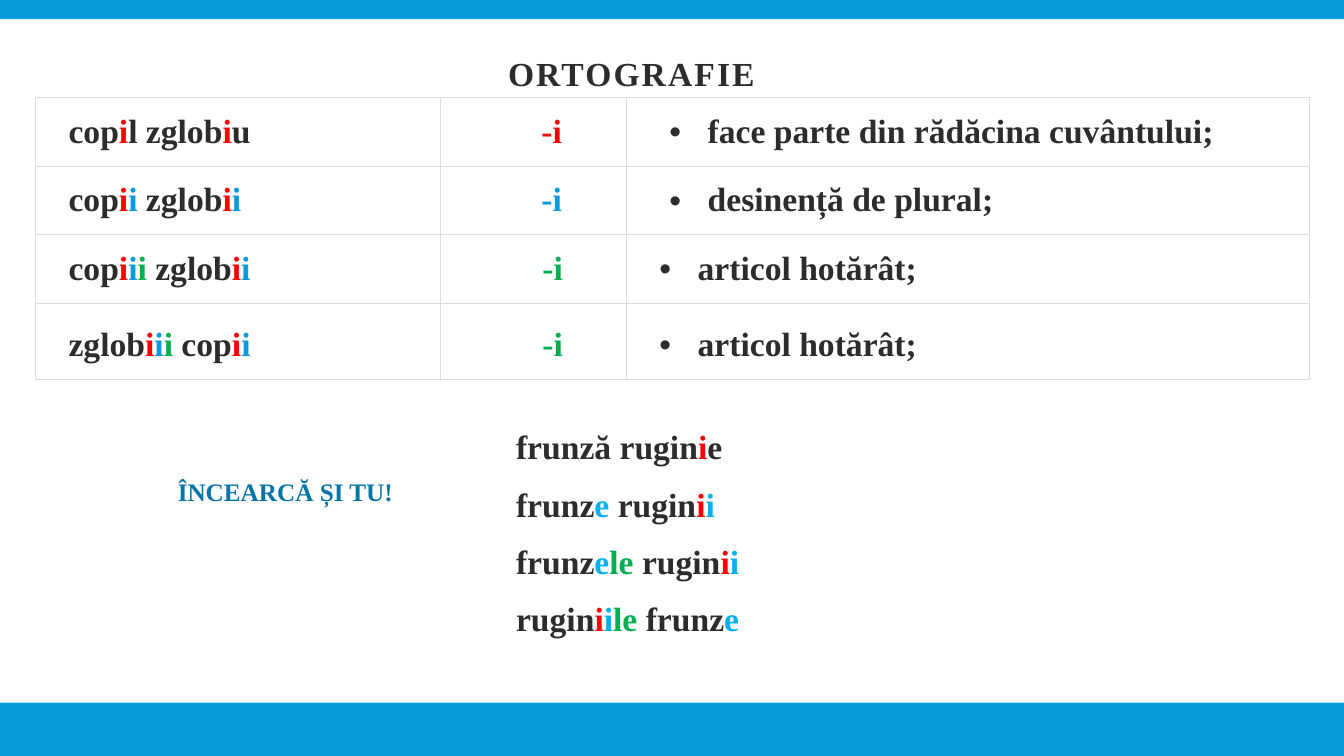
import pptx
import pptx.dml.color
import pptx.enum.shapes
import pptx.enum.text
import pptx.oxml
import pptx.oxml.ns
import pptx.util

Inches = pptx.util.Inches
Pt = pptx.util.Pt
RGBColor = pptx.dml.color.RGBColor
Align = pptx.enum.text.PP_ALIGN
Anchor = pptx.enum.text.MSO_ANCHOR

INK = RGBColor(0x2C, 0x2C, 0x2C)
BAND = RGBColor(0x09, 0x9B, 0xDD)
WHITE = RGBColor(0xFF, 0xFF, 0xFF)
ROOT = RGBColor(0xFF, 0x00, 0x00)
PLURAL = RGBColor(0x09, 0x9B, 0xDD)
PLURAL_LIGHT = RGBColor(0x00, 0xB0, 0xF0)
ARTICLE = RGBColor(0x00, 0xB0, 0x50)
PROMPT = RGBColor(0x07, 0x74, 0xA6)
GRID = "D8DEDC"
FONT = "Times New Roman"

# Each word is a list of (text, colour) spans
RULES = [
    ([("cop", INK), ("i", ROOT), ("l zglob", INK), ("i", ROOT), ("u", INK)],
     ROOT, 0.67, "face parte din rădăcina cuvântului;", 0.48),
    ([("cop", INK), ("i", ROOT), ("i", PLURAL), (" zglob", INK), ("i", ROOT), ("i", PLURAL)],
     PLURAL, 0.67, "desinență de plural;", 0.48),
    ([("cop", INK), ("i", ROOT), ("i", PLURAL), ("i", ARTICLE), (" zglob", INK),
      ("i", ROOT), ("i", PLURAL)],
     ARTICLE, 0.68, "articol hotărât;", 0.38),
    ([("zglob", INK), ("i", ROOT), ("i", PLURAL), ("i", ARTICLE), (" cop", INK),
      ("i", ROOT), ("i", PLURAL)],
     ARTICLE, 0.68, "articol hotărât;", 0.38),
]
EXERCISE = [
    [("frunză rugin", INK), ("i", ROOT), ("e", INK)],
    [("frunz", INK), ("e", PLURAL_LIGHT), (" rugin", INK), ("i", ROOT), ("i", PLURAL_LIGHT)],
    [("frunz", INK), ("e", PLURAL_LIGHT), ("le", ARTICLE), (" rugin", INK),
     ("i", ROOT), ("i", PLURAL_LIGHT)],
    [("rugin", INK), ("i", ROOT), ("i", PLURAL_LIGHT), ("le", ARTICLE), (" frunz", INK),
     ("e", PLURAL_LIGHT)],
]


def add_spans(para, spans, size=24):
    for text, colour in spans:
        span = para.add_run()
        span.text = text
        span.font.name = FONT
        span.font.size = Pt(size)
        span.font.bold = True
        span.font.color.rgb = colour


def indent(para, left, hanging=0.0, bullet=False):
    properties = para._p.get_or_add_pPr()
    properties.set("marL", str(Inches(left)))
    properties.set("indent", str(-Inches(hanging)))
    if bullet:
        for tag, name, value in (("buFont", "typeface", "Arial"), ("buChar", "char", "•")):
            mark = pptx.oxml.ns.qn("a:" + tag)
            properties.append(properties.makeelement(mark, {name: value}))


def style_cell(cell):
    cell.margin_left, cell.margin_right = Inches(0.33), Inches(0.02)
    cell.margin_top = cell.margin_bottom = Pt(11.2)
    cell.vertical_anchor = Anchor.BOTTOM
    cell.fill.solid()
    cell.fill.fore_color.rgb = WHITE
    # Borders come before the fill in the cell properties
    properties = cell._tc.get_or_add_tcPr()
    for position, side in enumerate("LRTB"):
        properties.insert(position, pptx.oxml.parse_xml(
            f'<a:ln{side} {pptx.oxml.ns.nsdecls("a")} w="{Pt(0.75)}"><a:solidFill>'
            f'<a:srgbClr val="{GRID}"/></a:solidFill></a:ln{side}>'))


def add_band(page, left, top, width, height):
    band = page.shapes.add_shape(pptx.enum.shapes.MSO_SHAPE.RECTANGLE,
                                 Inches(left), Inches(top), Inches(width), Inches(height))
    band.shadow.inherit = False
    band.fill.solid()
    band.fill.fore_color.rgb = BAND
    band.line.fill.background()


def set_title(page, left, top, width, height):
    title = page.shapes.title
    title.left, title.top = Inches(left), Inches(top)
    title.width, title.height = Inches(width), Inches(height)
    title.text_frame.vertical_anchor = Anchor.BOTTOM
    title.text_frame.auto_size = pptx.enum.text.MSO_AUTO_SIZE.NONE
    para = title.text_frame.paragraphs[0]
    para.alignment = Align.CENTER
    para.line_spacing = 0.8
    add_spans(para, [("ORTOGRAFIE ", INK)])
    para.runs[0].font._element.set("spc", "150")


def add_rules_table(page, left, top, width, height):
    table = page.shapes.add_table(len(RULES), 3, Inches(left), Inches(top),
                                  Inches(width), Inches(height)).table
    table.first_row = table.horz_banding = False
    for column, share in zip(table.columns, (4.02, 1.84, 6.78)):
        column.width = Inches(share)
    for row in table.rows:
        row.height = Inches(0.68)
    table.rows[len(RULES) - 1].height = Inches(0.75)
    for row, (word, colour, ending_left, meaning, meaning_left) in zip(table.rows, RULES):
        for cell in row.cells:
            style_cell(cell)
        example, ending, role = [cell.text_frame.paragraphs[0] for cell in row.cells]
        add_spans(example, word)
        indent(ending, ending_left)
        add_spans(ending, [("-i", colour)])
        indent(role, meaning_left, 0.38, bullet=True)
        add_spans(role, [(meaning, INK)])


def add_text(page, left, top, width, height, lines, size, align, gap=0):
    box = page.shapes.add_textbox(Inches(left), Inches(top), Inches(width), Inches(height))
    frame = box.text_frame
    frame.word_wrap = True
    for number, spans in enumerate(lines):
        para = frame.add_paragraph() if number else frame.paragraphs[0]
        para.alignment = align
        para.space_after = Pt(gap)
        add_spans(para, spans, size)


def build_spelling_slide(deck):
    page = deck.slides.add_slide(deck.slide_layouts[5])
    set_title(page, 0.35, 0.25, 11.93, 0.72)
    # Top and bottom bands
    add_band(page, 0, 0, 13.33, 0.19)
    add_band(page, 0, 6.97, 13.33, 0.53)
    # Rules, then the exercise
    add_rules_table(page, 0.35, 0.97, 12.63, 2.79)
    add_text(page, 1.37, 4.68, 2.92, 0.4, [[("ÎNCEARCĂ ȘI TU!", PROMPT)]], 18, Align.CENTER)
    add_text(page, 5.02, 4.18, 4.02, 2.32, EXERCISE, 24, Align.LEFT, gap=12)


def main():
    deck = pptx.Presentation()
    deck.slide_width, deck.slide_height = Inches(13.33), Inches(7.5)
    build_spelling_slide(deck)
    deck.save("out.pptx")


if __name__ == "__main__":
    main()
